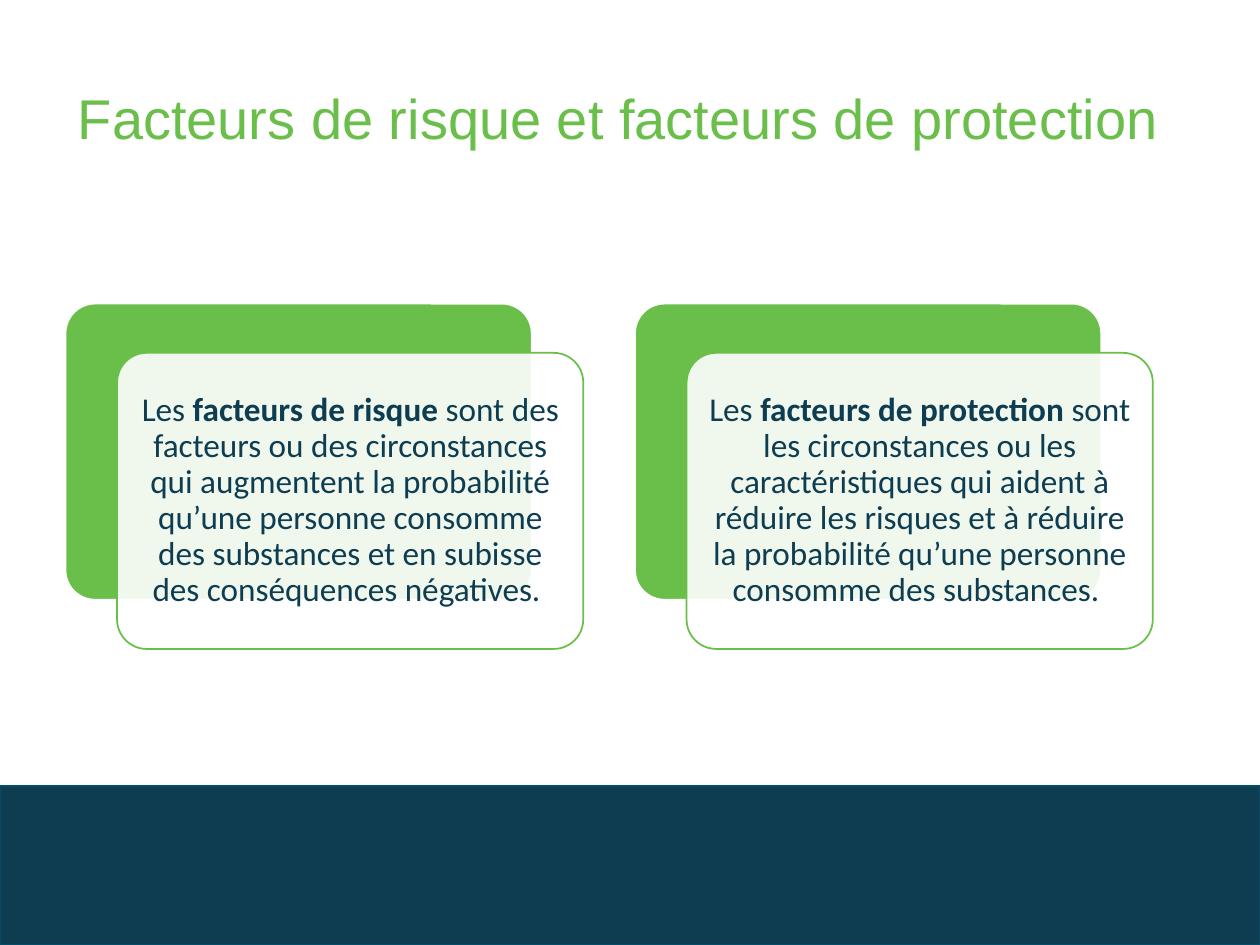
from pptx import Presentation
from pptx.dml.color import RGBColor
from pptx.enum.shapes import MSO_SHAPE
from pptx.enum.text import MSO_ANCHOR, PP_ALIGN
from pptx.oxml.ns import qn
from pptx.util import Pt
from lxml import etree

RECTANGLE = MSO_SHAPE.RECTANGLE
ROUNDED = MSO_SHAPE.ROUNDED_RECTANGLE
MIDDLE = MSO_ANCHOR.MIDDLE
LEFT, CENTER = PP_ALIGN.LEFT, PP_ALIGN.CENTER

GREEN = RGBColor(0x6A, 0xBF, 0x4B)
NAVY = RGBColor(0x0E, 0x3D, 0x51)
TEAL = RGBColor(0x00, 0x4E, 0x6A)
WHITE = RGBColor(0xFF, 0xFF, 0xFF)

CARD_W, CARD_H = 266.4, 169.2
FIRST_LEFT, CARD_TOP, CARD_STEP = 37.44, 173.52, 325.44
OFFSET_X, OFFSET_Y = 29.5, 28.1
INSET = 5

DEFINITIONS = [
    (("Les ", False), ("facteurs de risque ", True),
     ("sont des facteurs ou des circonstances qui augmentent la probabilité "
      "qu’une personne consomme des substances et en subisse des "
      "conséquences négatives. ", False)),
    (("Les ", False), ("facteurs de protection\u00a0", True),
     ("sont les circonstances ou les caractéristiques qui aident à réduire "
      "les risques et à réduire la probabilité qu’une personne consomme des "
      "substances. ", False)),
]


class SlideBuilder:
    def __init__(self, slide):
        self.slide = slide
        self.line_width = Pt(1)
        self.line_spacing = 0.9

    def panel(self, kind, left, top, width, height, fill, line, opacity=None):
        panel = self.slide.shapes.add_shape(
            kind, Pt(left), Pt(top), Pt(width), Pt(height))
        panel.shadow.inherit = False
        panel.fill.solid()
        panel.fill.fore_color.rgb = fill
        panel.line.color.rgb = line
        panel.line.width = self.line_width
        if kind == ROUNDED:
            panel.adjustments[0] = 0.1
        if opacity is not None:
            color = panel.fill._xPr.find(qn("a:solidFill"))[0]
            alpha = etree.SubElement(color, qn("a:alpha"))
            alpha.set("val", str(opacity * 1000))

    def text(self, left, top, width, height, runs, font, size, color,
             align=LEFT, inset=None, space_after=0):
        box = self.slide.shapes.add_textbox(
            Pt(left), Pt(top), Pt(width), Pt(height))
        frame = box.text_frame
        frame.word_wrap = True
        frame.vertical_anchor = MIDDLE
        if inset is not None:
            frame.margin_left = frame.margin_right = Pt(inset)
            frame.margin_top = frame.margin_bottom = Pt(inset)
        paragraph = frame.paragraphs[0]
        paragraph.alignment = align
        paragraph.line_spacing = self.line_spacing
        paragraph.space_after = Pt(space_after)
        for wording, bold in runs:
            run = paragraph.add_run()
            run.text = wording
            run.font.name = font
            run.font.size = Pt(size)
            run.font.bold = bold
            run.font.color.rgb = color

    def definition(self, left, top, runs):
        self.panel(ROUNDED, left, top, CARD_W, CARD_H, GREEN, WHITE)
        front_left, front_top = left + OFFSET_X, top + OFFSET_Y
        self.panel(ROUNDED, front_left, front_top, CARD_W, CARD_H,
                   WHITE, GREEN, opacity=90)
        self.text(front_left + INSET, front_top + INSET,
                  CARD_W - 2 * INSET, CARD_H - 2 * INSET, runs,
                  "Calibri", 19, NAVY, CENTER, inset=5.7, space_after=6.65)


def main():
    presentation = Presentation()
    presentation.slide_width, presentation.slide_height = Pt(720), Pt(540)
    slide = presentation.slides.add_slide(presentation.slide_layouts[6])
    builder = SlideBuilder(slide)
    builder.panel(RECTANGLE, 0, 449.28, 720, 90.72, NAVY, TEAL)
    builder.text(37.44, 28.8, 637.92, 80.64,
                 [("Facteurs de risque et facteurs de protection", False)],
                 "Arial", 32, GREEN)
    for index, runs in enumerate(DEFINITIONS):
        builder.definition(FIRST_LEFT + index * CARD_STEP, CARD_TOP, runs)
    presentation.save("out.pptx")


if __name__ == "__main__":
    main()
